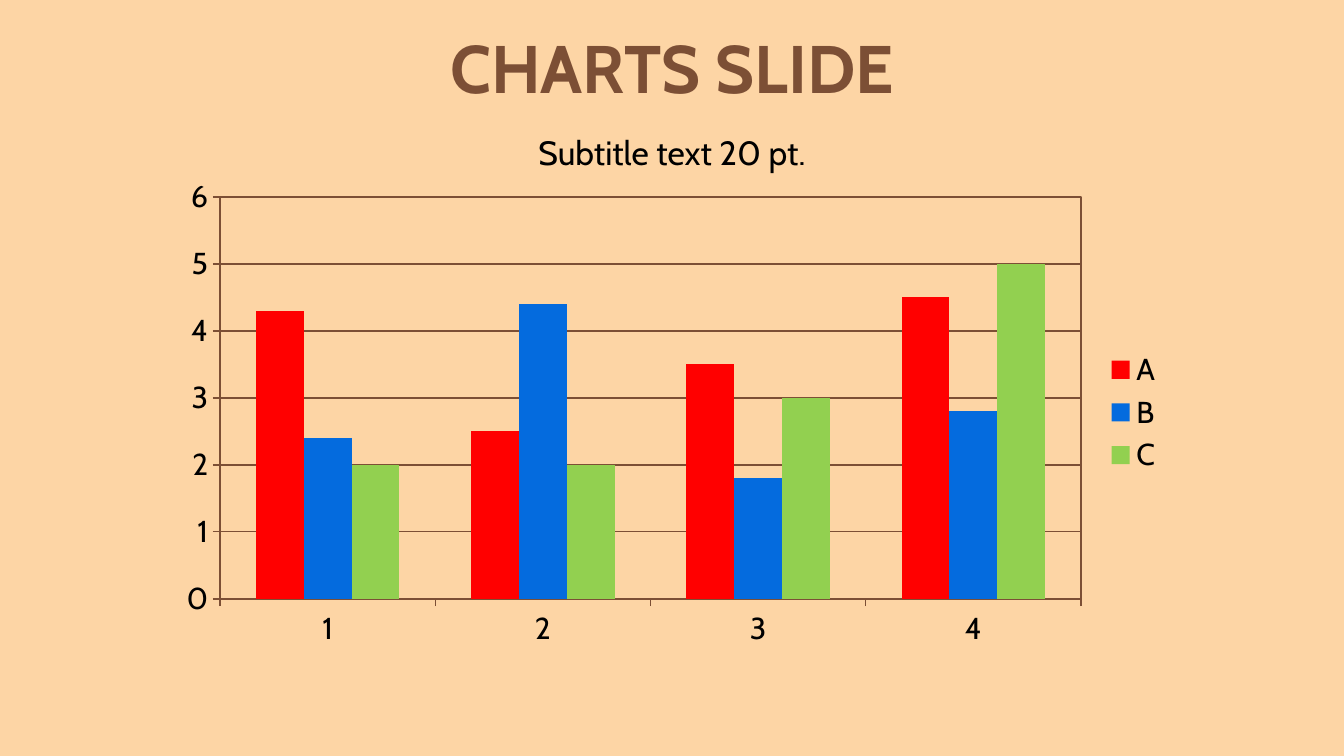
from dataclasses import dataclass
from typing import Any

from lxml.etree import SubElement
from pptx import Presentation
from pptx.chart.data import CategoryChartData
from pptx.dml.color import RGBColor
from pptx.enum.chart import XL_CHART_TYPE as ChartType
from pptx.enum.chart import XL_LEGEND_POSITION as LegendPosition
from pptx.enum.chart import XL_TICK_MARK as TickMark
from pptx.enum.text import MSO_ANCHOR as Anchor
from pptx.enum.text import MSO_AUTO_SIZE as AutoSize
from pptx.enum.text import PP_ALIGN as Align
from pptx.oxml import parse_xml
from pptx.oxml.ns import nsdecls, qn
from pptx.util import Emu, Pt

PX = 914400 / 121
FONT = "Cabin"
COLORS = {
    "sand": "FDD5A5",
    "brown": "7C4F35",
    "black": "000000",
    "red": "FF0000",
    "blue": "046BDE",
    "green": "92D050",
}


@dataclass(frozen=True)
class Area:
    left: int
    top: int
    width: int
    height: int


@dataclass(frozen=True)
class Heading:
    text: str
    area: Area
    size: int
    color: str
    bold: bool
    inset: int


@dataclass(frozen=True)
class Series:
    name: str
    values: tuple[float, ...]
    color: str


HEADINGS = (
    Heading("CHARTS SLIDE", Area(100, 23, 1144, 98), 40, "brown", True, 6),
    Heading("Subtitle text 20 pt.", Area(100, 131, 1144, 47), 20, "black", False, 12),
)
CHART_AREA = Area(167, 168, 1008, 489)
PLOT_AREA = Area(220, 197, 861, 402)
CATEGORIES = ("1", "2", "3", "4")
SERIES = (
    Series("A", (4.3, 2.5, 3.5, 4.5), "red"),
    Series("B", (2.4, 4.4, 1.8, 2.8), "blue"),
    Series("C", (2, 2, 3, 5), "green"),
)


def px(length: int) -> Emu:
    return Emu(round(length * PX))


def rgb(name: str) -> RGBColor:
    return RGBColor.from_string(COLORS[name])


def apply_format(target: Any, values: dict[str, Any]) -> None:
    for name, value in values.items():
        setattr(target, name, value)


def format_font(font: Any, size: int, color: str, bold: bool = False) -> None:
    apply_format(font, {"name": FONT, "size": Pt(size), "bold": bold})
    font.color.rgb = rgb(color)


def format_line(line: Any) -> None:
    line.color.rgb = rgb("brown")
    line.width = Pt(0.75)


def fill_heading(box: Any, heading: Heading) -> None:
    area = heading.area
    apply_format(box, {
        "left": px(area.left), "top": px(area.top),
        "width": px(area.width), "height": px(area.height),
    })
    frame = box.text_frame
    apply_format(frame, {
        "text": heading.text, "word_wrap": True, "auto_size": AutoSize.NONE,
        "vertical_anchor": Anchor.MIDDLE,
        "margin_left": px(heading.inset), "margin_right": px(heading.inset),
        "margin_top": px(6), "margin_bottom": px(6),
    })
    para = frame.paragraphs[0]
    apply_format(para, {"alignment": Align.CENTER, "line_spacing": 0.9, "space_before": Pt(0)})
    properties = para._p.get_or_add_pPr()
    properties.set("marL", "0")
    properties.set("indent", "0")
    SubElement(properties, qn("a:buNone"))
    format_font(para.runs[0].font, heading.size, heading.color, heading.bold)


def format_plot_area(chart: Any) -> None:
    plot_area = chart.element.find(".//" + qn("c:plotArea"))
    for layout in plot_area.findall(qn("c:layout")):
        plot_area.remove(layout)
    fractions = {
        "x": (PLOT_AREA.left - CHART_AREA.left) / CHART_AREA.width,
        "y": (PLOT_AREA.top - CHART_AREA.top) / CHART_AREA.height,
        "w": PLOT_AREA.width / CHART_AREA.width,
        "h": PLOT_AREA.height / CHART_AREA.height,
    }
    sizes = "".join(f'<c:{key} val="{value:.4f}"/>' for key, value in fractions.items())
    plot_area.insert(0, parse_xml(
        f'<c:layout {nsdecls("c")}><c:manualLayout><c:layoutTarget val="inner"/>'
        f'<c:xMode val="edge"/><c:yMode val="edge"/>{sizes}</c:manualLayout></c:layout>'
    ))
    plot_area.append(parse_xml(
        f'<c:spPr {nsdecls("c", "a")}><a:noFill/><a:ln w="{Pt(0.75)}"><a:solidFill>'
        f'<a:srgbClr val="{COLORS["brown"]}"/></a:solidFill></a:ln></c:spPr>'
    ))


def add_column_chart(page: Any) -> None:
    data = CategoryChartData()
    data.categories = CATEGORIES
    for series in SERIES:
        data.add_series(series.name, series.values)
    chart = page.shapes.add_chart(
        ChartType.COLUMN_CLUSTERED, px(CHART_AREA.left), px(CHART_AREA.top),
        px(CHART_AREA.width), px(CHART_AREA.height), data,
    ).chart
    apply_format(chart, {"has_title": False, "has_legend": True})
    format_font(chart.font, 18, "black")
    apply_format(chart.legend, {"position": LegendPosition.RIGHT, "include_in_layout": False})
    format_font(chart.legend.font, 18, "black")
    plot = chart.plots[0]
    apply_format(plot, {"gap_width": 150, "overlap": 0, "vary_by_categories": False})
    for drawn, series in zip(plot.series, SERIES):
        drawn.invert_if_negative = False
        drawn.format.fill.solid()
        drawn.format.fill.fore_color.rgb = rgb(series.color)
    for axis in (chart.category_axis, chart.value_axis):
        apply_format(axis, {"major_tick_mark": TickMark.OUTSIDE, "minor_tick_mark": TickMark.NONE})
        format_font(axis.tick_labels.font, 18, "black")
        format_line(axis.format.line)
    apply_format(chart.value_axis, {
        "minimum_scale": 0, "maximum_scale": 6, "major_unit": 1, "has_major_gridlines": True,
    })
    format_line(chart.value_axis.major_gridlines.format.line)
    format_plot_area(chart)


def main() -> None:
    deck = Presentation()
    apply_format(deck, {"slide_width": px(1344), "slide_height": px(756)})
    page = deck.slides.add_slide(deck.slide_layouts[1])
    page.background.fill.solid()
    page.background.fill.fore_color.rgb = rgb("sand")
    for box, heading in zip(page.placeholders, HEADINGS):
        fill_heading(box, heading)
    add_column_chart(page)
    deck.save("out.pptx")


if __name__ == "__main__":
    main()
